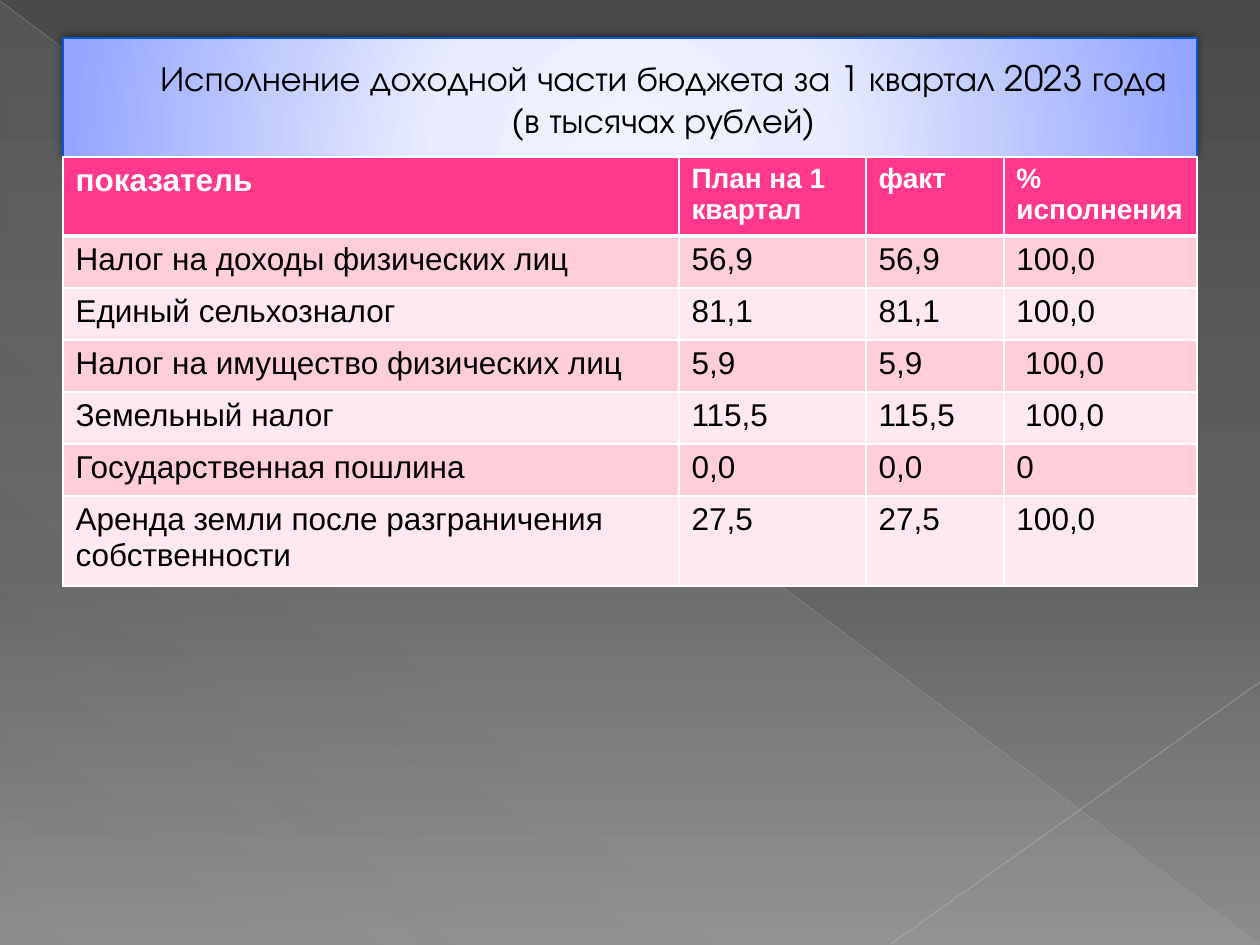
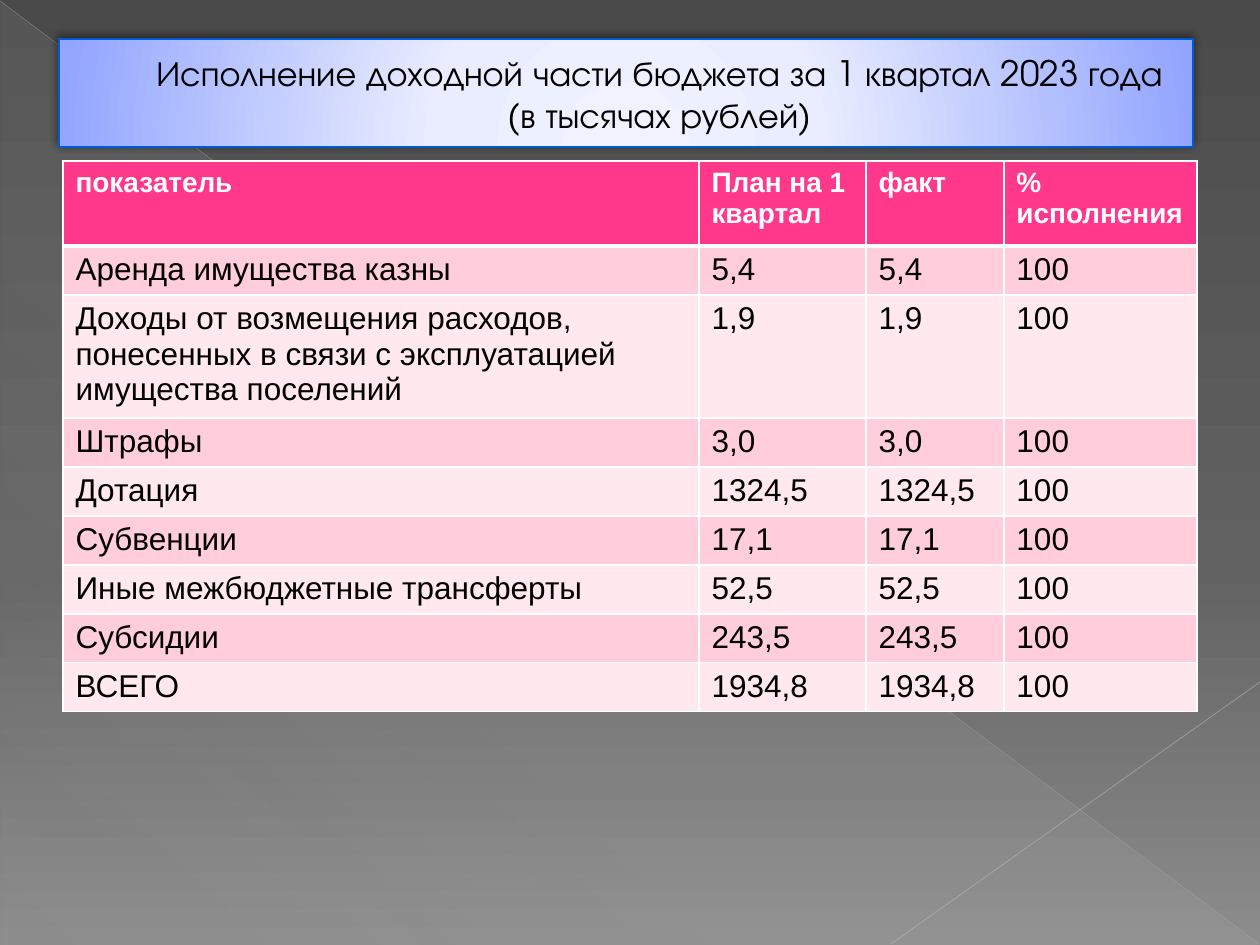
from dataclasses import dataclass

from lxml.etree import SubElement
from pptx import Presentation
from pptx.dml.color import RGBColor
from pptx.enum.shapes import MSO_CONNECTOR as Connector, MSO_SHAPE as Shape
from pptx.enum.text import MSO_ANCHOR as Anchor, PP_ALIGN as Align
from pptx.oxml import parse_xml
from pptx.oxml.ns import nsdecls, qn
from pptx.util import Pt

EMU_PER_PX = 914400 / 126
WIDTH, HEIGHT = 1260, 945


def px(value):
    return round(value * EMU_PER_PX)


@dataclass(frozen=True)
class Theme:
    background: tuple = ((0, "4A4A4A", 100), (60, "626262", 100), (100, "8C8C8C", 100))
    facet: tuple = ((0, "D2D2D2", 10), (70, "D2D2D2", 8), (100, "D2D2D2", 1))
    banner: tuple = ((0, "F0F2FF", 100), (34, "EAEDFF", 100), (100, "92A5FF", 100))
    banner_line: str = "005BD3"
    title_outline: str = "B12761"
    falling_line: str = "BFBFBF"
    rising_line: str = "C6C6C6"
    text: str = "000000"
    header_text: str = "FFFFFF"
    header_fill: str = "FF388C"
    row_fills: tuple = ("FFCEDA", "FFE8EE")
    border: str = "FFFFFF"
    title_font: str = "TeX Gyre Adventor"
    body_font: str = "Arial"
    title_size: int = 20
    body_size: int = 18
    header_size: int = 16


class BudgetDeck:
    def __init__(self, theme):
        self.theme = theme
        self.slide = None
        self.presentation = Presentation()
        self.presentation.slide_width = px(WIDTH)
        self.presentation.slide_height = px(HEIGHT)

    def add_slide(self):
        self.slide = self.presentation.slides.add_slide(self.presentation.slide_layouts[6])
        self.slide.background.fill.solid()
        properties = self.slide.element.find(".//" + qn("p:bgPr"))
        self.set_gradient(properties, self.theme.background, '<a:lin ang="5400000" scaled="0"/>')
        self.add_facet()
        self.add_line((0, 1), (1259, 944), self.theme.falling_line, 0.39, 35)
        self.add_line((1260, 682), (891, 944), self.theme.rising_line, 0.47, 45)

    def set_gradient(self, properties, stops, direction):
        stop_xml = "".join(
            f'<a:gs pos="{position * 1000}"><a:srgbClr val="{color}">'
            f'<a:alpha val="{opacity * 1000}"/></a:srgbClr></a:gs>'
            for position, color, opacity in stops
        )
        gradient = parse_xml(
            f'<a:gradFill {nsdecls("a")} rotWithShape="1"><a:gsLst>{stop_xml}</a:gsLst>'
            f"{direction}</a:gradFill>"
        )
        properties.replace(properties.find(qn("a:solidFill")), gradient)

    def add_gradient_shape(self, kind, box, stops, direction):
        shape = self.slide.shapes.add_shape(kind, *map(px, box))
        shape.shadow.inherit = False
        shape.fill.solid()
        self.set_gradient(shape.element.spPr, stops, direction)
        return shape

    def add_facet(self):
        facet = self.add_gradient_shape(
            Shape.RIGHT_TRIANGLE, (1, 2, 1258, 943), self.theme.facet,
            f'<a:lin ang="{133 * 60000}" scaled="0"/>',
        )
        facet.line.fill.background()

    def add_line(self, start, end, color, width, opacity):
        line = self.slide.shapes.add_connector(Connector.STRAIGHT, *map(px, start + end))
        line.line.color.rgb = RGBColor.from_string(color)
        line.line.width = Pt(width)
        properties = line.element.spPr
        color_element = properties.find(".//" + qn("a:srgbClr"))
        SubElement(color_element, qn("a:alpha"), val=str(opacity * 1000))
        SubElement(properties, qn("a:effectLst"))

    def add_title(self, text, box):
        theme = self.theme
        banner = self.add_gradient_shape(
            Shape.RECTANGLE, box, theme.banner,
            '<a:path path="circle"><a:fillToRect l="50000" t="155000" r="50000" b="-55000"/></a:path>',
        )
        banner.line.color.rgb = RGBColor.from_string(theme.banner_line)
        banner.line.width = Pt(0.75)
        effects = banner.element.spPr.find(qn("a:effectLst"))
        effects.append(parse_xml(
            f'<a:outerShdw {nsdecls("a")} blurRad="{Pt(5)}" dist="{Pt(2)}" dir="{245 * 60000}" '
            'rotWithShape="0"><a:srgbClr val="000000"><a:alpha val="50000"/></a:srgbClr></a:outerShdw>'
        ))
        frame = banner.text_frame
        frame.text = text
        frame.word_wrap = True
        frame.vertical_anchor = Anchor.MIDDLE
        paragraph = frame.paragraphs[0]
        paragraph.alignment = Align.CENTER
        paragraph_properties = paragraph._p.get_or_add_pPr()
        paragraph_properties.set("marL", str(px(67)))
        paragraph_properties.set("indent", "0")
        self.format_text(paragraph, theme.title_font, theme.title_size, theme.text)
        paragraph.runs[0].font._element.insert(0, self.line_xml("ln", theme.title_outline, 0.5))

    def format_text(self, paragraph, name, size, color, bold=False):
        for run in paragraph.runs:
            run.font.name = name
            run.font.size = Pt(size)
            run.font.bold = bold
            run.font.color.rgb = RGBColor.from_string(color)

    def line_xml(self, tag, color, width):
        return parse_xml(
            f'<a:{tag} {nsdecls("a")} w="{Pt(width)}"><a:solidFill>'
            f'<a:srgbClr val="{color}"/></a:solidFill></a:{tag}>'
        )

    def add_table(self, origin, column_widths, row_heights, rows, first_header_size):
        theme = self.theme
        size = (sum(column_widths), sum(row_heights))
        table = self.slide.shapes.add_table(
            len(rows), len(column_widths), *map(px, origin + size)
        ).table
        for column, width in zip(table.columns, column_widths):
            column.width = px(width)
        for row, height in zip(table.rows, row_heights):
            row.height = px(height)
        for row_index, values in enumerate(rows):
            for column_index, value in enumerate(values):
                cell = table.cell(row_index, column_index)
                if row_index == 0:
                    fill, color = theme.header_fill, theme.header_text
                    font_size = theme.header_size if column_index else first_header_size
                else:
                    fill, color = theme.row_fills[(row_index - 1) % 2], theme.text
                    font_size = theme.body_size
                self.fill_cell(cell, value, fill, color, font_size, row_index)

    def fill_cell(self, cell, value, fill, color, font_size, row_index):
        cell.text_frame.text = value
        self.format_text(
            cell.text_frame.paragraphs[0], self.theme.body_font, font_size, color, row_index == 0
        )
        cell.fill.solid()
        cell.fill.fore_color.rgb = RGBColor.from_string(fill)
        widths = {
            "lnL": 1,
            "lnR": 1,
            "lnT": 3 if row_index == 1 else 1,
            "lnB": 3 if row_index == 0 else 1,
        }
        properties = cell._tc.get_or_add_tcPr()
        for position, (tag, width) in enumerate(widths.items()):
            properties.insert(position, self.line_xml(tag, self.theme.border, width))


TITLE = "Исполнение доходной части бюджета за 1 квартал 2023 года (в тысячах рублей)"
HEADER = ("показатель", "План на 1 квартал", "факт", "% исполнения")
TAX_ROWS = [
    ("Налог на доходы физических лиц", "56,9", "56,9", "100,0"),
    ("Единый сельхозналог", "81,1", "81,1", "100,0"),
    ("Налог на имущество физических лиц", "5,9", "5,9", " 100,0"),
    ("Земельный налог", "115,5", "115,5", " 100,0"),
    ("Государственная пошлина", "0,0", "0,0", "0"),
    ("Аренда земли после разграничения собственности", "27,5", "27,5", "100,0"),
]
OTHER_INCOME = [
    ("Аренда имущества казны", "5,4"),
    ("Доходы от возмещения расходов, понесенных в связи с эксплуатацией имущества поселений", "1,9"),
    ("Штрафы", "3,0"),
    ("Дотация", "1324,5"),
    ("Субвенции", "17,1"),
    ("Иные межбюджетные трансферты", "52,5"),
    ("Субсидии", "243,5"),
    ("ВСЕГО", "1934,8"),
]


def main():
    deck = BudgetDeck(Theme())

    deck.add_slide()
    deck.add_title(TITLE, (63, 38, 1134, 120))
    deck.add_table(
        (63, 157), (616, 187, 138, 193), [79] + [52] * 5 + [90],
        [HEADER] + TAX_ROWS, deck.theme.body_size,
    )

    deck.add_slide()
    deck.add_title(TITLE, (59, 39, 1134, 108))
    other_rows = [(name, amount, amount, "100") for name, amount in OTHER_INCOME]
    deck.add_table(
        (63, 161), (636, 167, 138, 193), [85, 49, 123] + [49] * 6,
        [HEADER] + other_rows, deck.theme.header_size,
    )

    deck.presentation.save("out.pptx")


if __name__ == "__main__":
    main()
